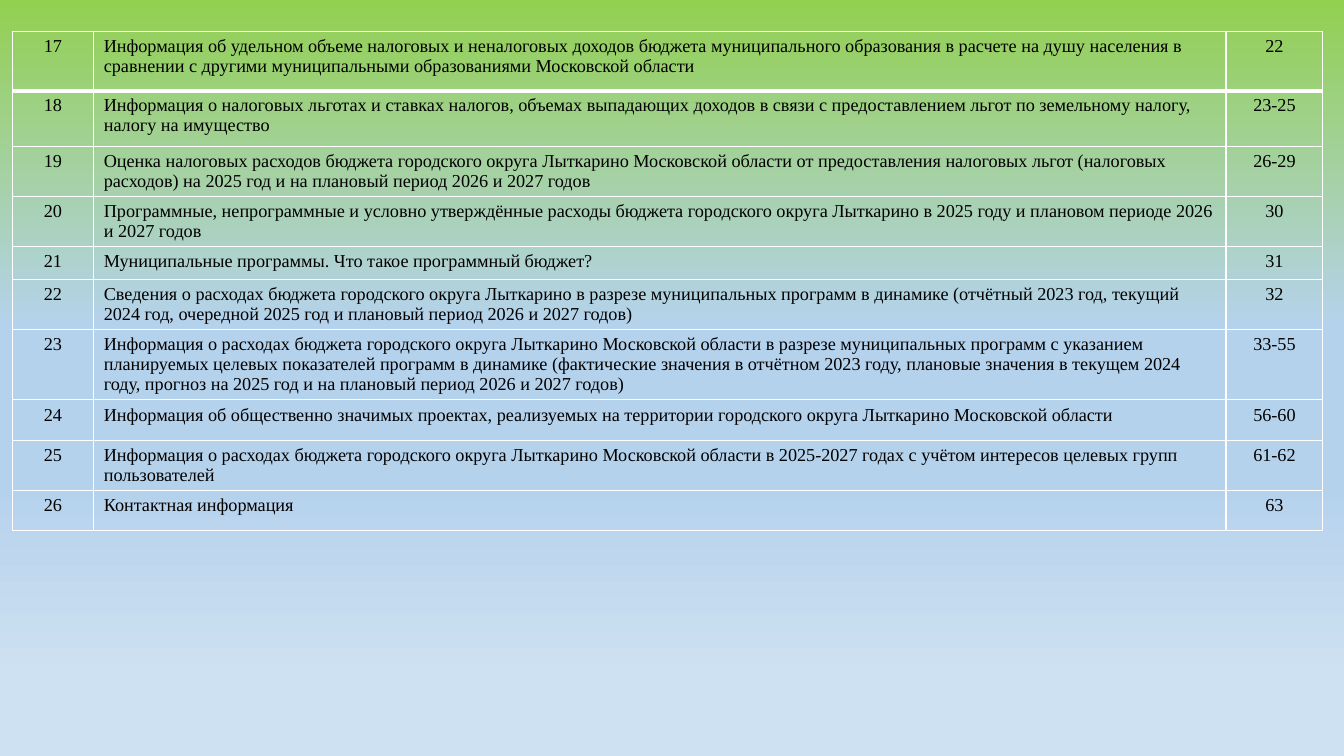
from dataclasses import dataclass

from lxml import etree
from pptx import Presentation
from pptx.dml.color import RGBColor
from pptx.enum.text import PP_ALIGN
from pptx.oxml.ns import qn
from pptx.util import Inches, Pt

CENTER, LEFT = PP_ALIGN.CENTER, PP_ALIGN.LEFT


@dataclass(frozen=True)
class Theme:
    font: str = "Times New Roman"
    size: int = 13
    ink: str = "000000"
    rule: str = "FFFFFF"
    thin: int = 1
    thick: int = 3
    backdrop: tuple = ((0, "92D050"), (43, "B5D2EC"), (64, "B5D2EC"), (90, "CEE1F2"))


THEME = Theme()
SLIDE_WIDTH, SLIDE_HEIGHT = 13.33, 7.5
CONTENTS_BOX = (0.12, 0.31, 13, 4.2)
COLUMN_WIDTHS = (0.81, 11.23, 0.96)
COLUMN_ALIGNMENTS = (CENTER, LEFT, CENTER)
ROW_HEIGHTS = (0.59, 0.55, 0.4, 0.33, 0.33) + (0.4,) * 5
FIRST_NUMBER = 17

CONTENTS = (
    ("Информация об удельном объеме налоговых и неналоговых доходов бюджета муниципального образования "
     "в расчете на душу населения в сравнении с другими муниципальными образованиями Московской области", "22"),
    ("Информация о налоговых льготах и ставках налогов, объемах выпадающих доходов в связи с "
     "предоставлением льгот по земельному налогу, налогу на имущество", "23-25"),
    ("Оценка налоговых расходов бюджета городского округа Лыткарино Московской области от предоставления "
     "налоговых льгот (налоговых расходов) на 2025 год и на плановый период 2026 и 2027 годов", "26-29"),
    ("Программные, непрограммные и условно утверждённые расходы бюджета городского округа Лыткарино "
     "в 2025 году и плановом периоде 2026 и 2027 годов", "30"),
    ("Муниципальные программы. Что такое программный бюджет?", "31"),
    ("Сведения о расходах бюджета городского округа Лыткарино в разрезе муниципальных программ в динамике "
     "(отчётный 2023 год, текущий 2024 год, очередной 2025 год и плановый период 2026 и 2027 годов)", "32"),
    ("Информация о расходах бюджета городского округа Лыткарино Московской области в разрезе муниципальных "
     "программ с указанием планируемых целевых показателей программ в динамике (фактические значения в "
     "отчётном 2023 году, плановые значения в текущем 2024 году, прогноз на 2025 год и на плановый период "
     "2026 и 2027 годов)", "33-55"),
    ("Информация об общественно значимых проектах, реализуемых на территории городского округа Лыткарино "
     "Московской области", "56-60"),
    ("Информация о расходах бюджета городского округа Лыткарино Московской области в 2025-2027 годах "
     "с учётом интересов целевых групп пользователей", "61-62"),
    ("Контактная информация", "63"),
)


def add_color(parent, color):
    etree.SubElement(parent, qn("a:srgbClr"), val=color)


def paint_backdrop(slide):
    fill = slide.background.fill
    fill.gradient()
    fill.gradient_angle = 270
    stops = next(slide.element.iter(qn("a:gsLst")))
    for stop in list(stops):
        stops.remove(stop)
    for position, color in THEME.backdrop:
        add_color(etree.SubElement(stops, qn("a:gs"), pos=str(position * 1000)), color)


def rule_cell(cell, row):
    widths = {
        "a:lnL": THEME.thin,
        "a:lnR": THEME.thin,
        "a:lnT": THEME.thick if row == 1 else THEME.thin,
        "a:lnB": THEME.thick if row == 0 else THEME.thin,
    }
    properties = cell._tc.get_or_add_tcPr()
    for side, width in widths.items():
        line = etree.SubElement(properties, qn(side), w=str(Pt(width)))
        add_color(etree.SubElement(line, qn("a:solidFill")), THEME.rule)
    cell.fill.background()


def write_cell(cell, wording, alignment):
    cell.text = wording
    paragraph = cell.text_frame.paragraphs[0]
    paragraph.alignment = alignment
    paragraph.font.name = THEME.font
    paragraph.font.size = Pt(THEME.size)
    paragraph.font.color.rgb = RGBColor.from_string(THEME.ink)


def add_contents(slide, box):
    table = slide.shapes.add_table(
        len(CONTENTS), len(COLUMN_WIDTHS), *(Inches(length) for length in box)
    ).table
    table.first_row = False
    table.horz_banding = False
    for column, width in zip(table.columns, COLUMN_WIDTHS):
        column.width = Inches(width)
    for row, (title, pages) in enumerate(CONTENTS):
        table.rows[row].height = Inches(ROW_HEIGHTS[row])
        entry = (str(FIRST_NUMBER + row), title, pages)
        for column, (wording, alignment) in enumerate(zip(entry, COLUMN_ALIGNMENTS)):
            cell = table.cell(row, column)
            rule_cell(cell, row)
            write_cell(cell, wording, alignment)


def main():
    presentation = Presentation()
    presentation.slide_width = Inches(SLIDE_WIDTH)
    presentation.slide_height = Inches(SLIDE_HEIGHT)
    slide = presentation.slides.add_slide(presentation.slide_layouts[6])
    paint_backdrop(slide)
    add_contents(slide, CONTENTS_BOX)
    presentation.save("out.pptx")


if __name__ == "__main__":
    main()
